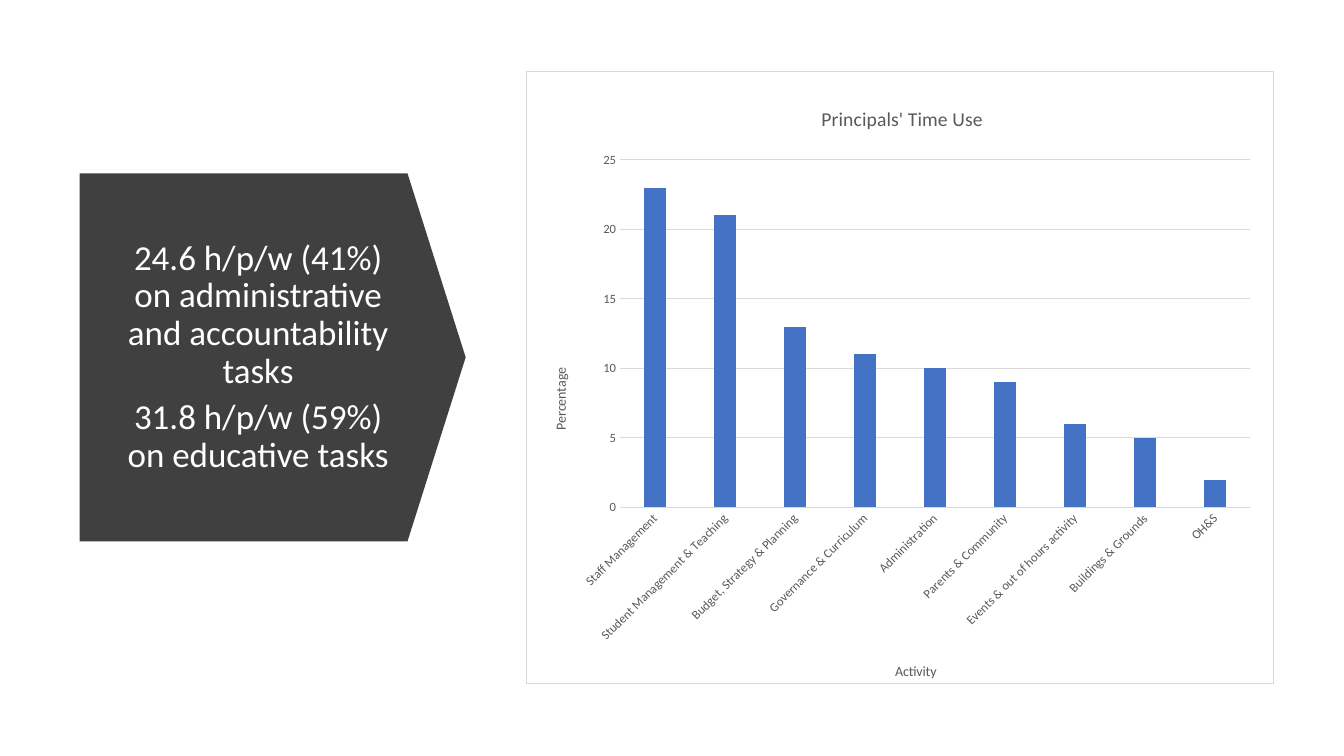
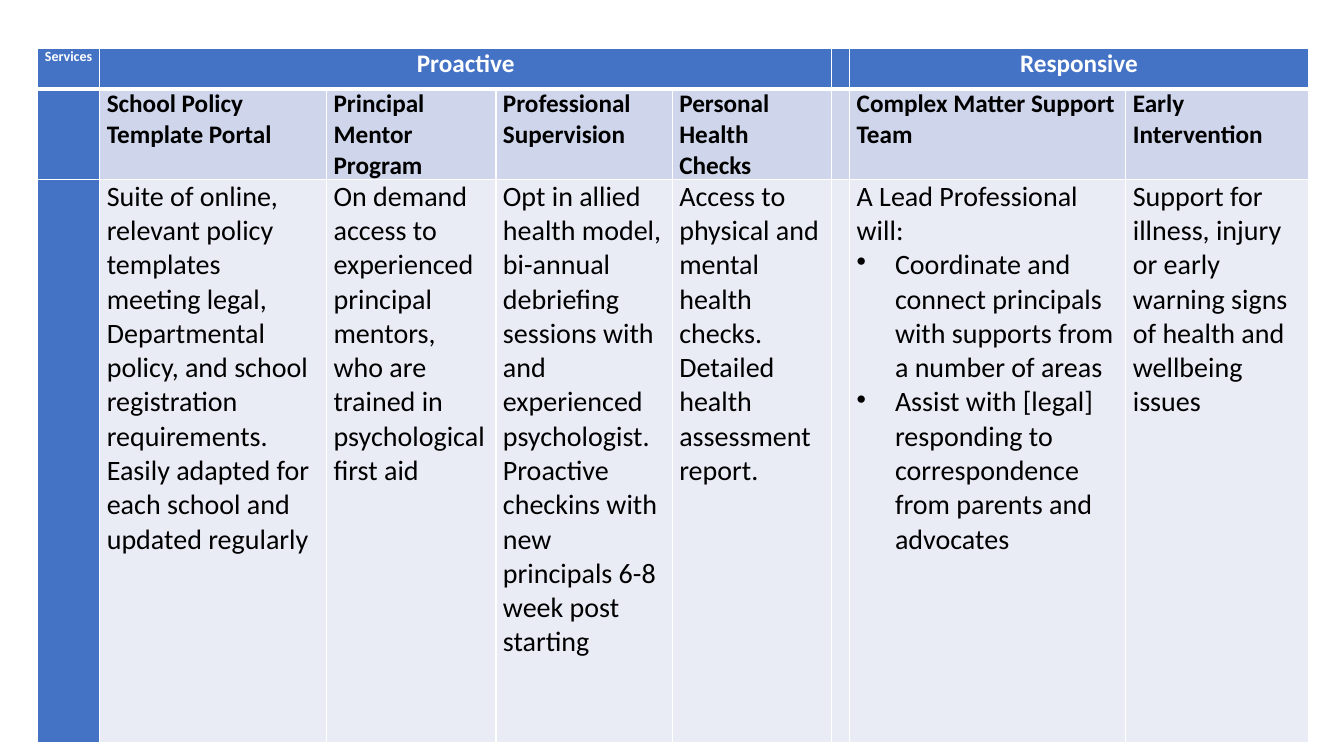
from lxml.etree import SubElement
from pptx import Presentation
from pptx.chart.data import CategoryChartData
from pptx.dml.color import RGBColor
from pptx.enum.chart import XL_CHART_TYPE, XL_TICK_MARK
from pptx.enum.shapes import MSO_SHAPE
from pptx.enum.text import MSO_ANCHOR, PP_ALIGN
from pptx.oxml import parse_xml
from pptx.oxml.ns import nsdecls, qn
from pptx.util import Inches, Pt

WHITE = RGBColor(0xFF, 0xFF, 0xFF)
BLACK = RGBColor(0x00, 0x00, 0x00)
CHARCOAL = RGBColor(0x40, 0x40, 0x40)
GREY = RGBColor(0x59, 0x59, 0x59)
RULE = RGBColor(0xD9, 0xD9, 0xD9)
BLUE = RGBColor(0x44, 0x72, 0xC4)
BAND = RGBColor(0xCF, 0xD5, 0xEA)
PALE = RGBColor(0xE9, 0xEB, 0xF5)

GRID_COLUMNS, GRID_ROWS = 160, 90
BULLET = "•"

TIME_USE = {
    "Staff Management": 23,
    "Student Management & Teaching": 21,
    "Budget, Strategy & Planning": 13,
    "Governance & Curriculum": 11,
    "Administration": 10,
    "Parents & Community": 9,
    "Events & out of hours activity": 6,
    "Buildings & Grounds": 5,
    "OH&S": 2,
}

SERVICE_COLUMNS = [7.44, 27, 20.16, 21, 18.96, 2.16, 32.88, 21.72]
SERVICE_ROWS = [4.8, 9.6, 67.08]
SERVICES = [
    ["Services", "Proactive", "", "", "", "", "Responsive", ""],
    ["", "School Policy Template Portal", "Principal Mentor Program",
     "Professional Supervision", "Personal Health Checks", "",
     "Complex Matter Support Team", "Early Intervention"],
    ["",
     "Suite of online, relevant policy templates meeting legal, Departmental policy, "
     "and school registration requirements. Easily adapted for each school and "
     "updated regularly",
     "On demand access to experienced principal mentors, who are trained in "
     "psychological first aid",
     "Opt in allied health model, bi-annual debriefing sessions with and "
     "experienced psychologist.\n"
     "Proactive checkins with new principals 6-8 week post starting",
     "Access to physical and mental health checks.\nDetailed health assessment report.",
     "",
     "A Lead Professional will:\n"
     "•Coordinate and connect principals with supports from a number of areas\n"
     "•Assist with [legal] responding to correspondence from parents and advocates",
     "Support for illness, injury or early warning signs of health and wellbeing issues"],
]
HEADER_SPANS = [(1, 4), (6, 7)]
ROW_STYLES = [
    (BLUE, {"size": Pt(18), "bold": True, "color": WHITE}, {"alignment": PP_ALIGN.CENTER}),
    (BAND, {"size": Pt(18), "bold": True, "color": BLACK}, {}),
    (PALE, {"size": Pt(20), "bold": False, "color": BLACK}, {}),
]


def apply(target, values):
    for name, value in values.items():
        if name == "color":
            target.color.rgb = value
        else:
            setattr(target, name, value)


def place(parent, index, x, y, width=None, height=None):
    for layout in parent.findall(qn("c:layout")):
        parent.remove(layout)
    layout = parse_xml(f"<c:layout {nsdecls('c')}><c:manualLayout/></c:layout>")
    values = {"xMode": "edge", "yMode": "edge", "x": x, "y": y}
    if width is not None:
        values = {"layoutTarget": "inner", **values, "w": width, "h": height}
    for name, value in values.items():
        SubElement(layout[0], qn(f"c:{name}")).set("val", str(value))
    parent.insert(index, layout)


class Deck:
    font_name = "Calibri"

    def __init__(self):
        self.presentation = Presentation()
        apply(self.presentation, {"slide_width": Inches(13.33), "slide_height": Inches(7.5)})
        self.slide = None

    def add_slide(self):
        self.slide = self.presentation.slides.add_slide(self.presentation.slide_layouts[6])

    def across(self, columns):
        return round(self.presentation.slide_width * columns / GRID_COLUMNS)

    def down(self, rows):
        return round(self.presentation.slide_height * rows / GRID_ROWS)

    def box(self, left, top, width, height):
        return self.across(left), self.down(top), self.across(width), self.down(height)

    def set_text(self, frame, text, font, layout):
        for index, line in enumerate(text.split("\n")):
            paragraph = frame.add_paragraph() if index else frame.paragraphs[0]
            if line.startswith(BULLET):
                properties = paragraph._p.get_or_add_pPr()
                properties.set("marL", str(Inches(0.38)))
                properties.set("indent", str(-Inches(0.38)))
                SubElement(properties, qn("a:buChar")).set("char", BULLET)
            apply(paragraph, layout)
            run = paragraph.add_run()
            run.text = line.removeprefix(BULLET)
            apply(run.font, {"name": self.font_name, **font})

    def pentagon(self, bounds, color, point):
        shape = self.slide.shapes.add_shape(MSO_SHAPE.PENTAGON, *self.box(*bounds))
        shape.adjustments[0] = point
        shape.shadow.inherit = False
        shape.fill.solid()
        shape.fill.fore_color.rgb = color
        shape.line.fill.background()

    def text(self, bounds, text, font, layout):
        frame = self.slide.shapes.add_textbox(*self.box(*bounds)).text_frame
        apply(frame, {"word_wrap": True, "vertical_anchor": MSO_ANCHOR.MIDDLE})
        self.set_text(frame, text, font, layout)

    def chart_title(self, title, text, size, x, y):
        self.set_text(title.text_frame, text, {"size": Pt(size), "bold": False, "color": GREY}, {})
        place(title._element, 1, x, y)

    def column_chart(self, bounds, title, category_title, value_title, values):
        data = CategoryChartData()
        data.categories = list(values)
        data.add_series("Series 1", list(values.values()))
        chart = self.slide.shapes.add_chart(
            XL_CHART_TYPE.COLUMN_CLUSTERED, *self.box(*bounds), data).chart
        chart.has_legend = False
        apply(chart.font, {"name": self.font_name, "size": Pt(10), "color": BLACK})
        self.chart_title(chart.chart_title, title, 14, 0.39, 0.05)
        plot = chart.plots[0]
        apply(plot, {"gap_width": 219, "overlap": -27, "vary_by_categories": False})
        fill = plot.series[0].format.fill
        fill.solid()
        fill.fore_color.rgb = BLUE

        category_axis, value_axis = chart.category_axis, chart.value_axis
        apply(value_axis, {"minimum_scale": 0, "maximum_scale": 25, "major_unit": 5,
                           "has_major_gridlines": True})
        for axis in (category_axis, value_axis):
            apply(axis, {"major_tick_mark": XL_TICK_MARK.NONE,
                         "minor_tick_mark": XL_TICK_MARK.NONE})
            apply(axis.tick_labels.font, {"name": self.font_name, "size": Pt(9), "color": GREY})
        for line in (category_axis.format.line, value_axis.major_gridlines.format.line):
            apply(line, {"color": RULE, "width": Pt(0.75)})
        value_axis.format.line.fill.background()
        self.chart_title(category_axis.axis_title, category_title, 10, 0.49, 0.96)
        self.chart_title(value_axis.axis_title, value_title, 10, 0.03, 0.48)
        labels = category_axis._element.find(f"{qn('c:txPr')}/{qn('a:bodyPr')}")
        labels.set("rot", "-2700000")
        next(value_axis.axis_title._element.iter(qn("a:bodyPr"))).set("rot", "-5400000")

        chart_element = chart._chartSpace.find(qn("c:chart"))
        place(chart_element.find(qn("c:plotArea")), 0, 0.125, 0.145, 0.844, 0.567)
        chart_element.addnext(parse_xml(
            f"<c:spPr {nsdecls('c', 'a')}>"
            f'<a:solidFill><a:srgbClr val="{WHITE}"/></a:solidFill>'
            f'<a:ln w="{Pt(0.75)}"><a:solidFill><a:srgbClr val="{RULE}"/></a:solidFill></a:ln>'
            "</c:spPr>"))

    def cell_borders(self, cell, widths):
        properties = cell._tc.get_or_add_tcPr()
        for index, (side, width) in enumerate(widths.items()):
            properties.insert(index, parse_xml(
                f'<a:ln{side} {nsdecls("a")} w="{Pt(width)}"><a:solidFill>'
                f'<a:srgbClr val="{WHITE}"/></a:solidFill></a:ln{side}>'))

    def service_table(self, left, top):
        bounds = self.box(left, top, sum(SERVICE_COLUMNS), sum(SERVICE_ROWS))
        table = self.slide.shapes.add_table(
            len(SERVICE_ROWS), len(SERVICE_COLUMNS), *bounds).table
        for column, width in zip(table.columns, SERVICE_COLUMNS):
            column.width = self.across(width)
        for row, height in zip(table.rows, SERVICE_ROWS):
            row.height = self.down(height)
        for first, last in HEADER_SPANS:
            table.cell(0, first).merge(table.cell(0, last))
        for row, (texts, (color, font, layout)) in enumerate(zip(SERVICES, ROW_STYLES)):
            for column, text in enumerate(texts):
                cell = table.cell(row, column)
                apply(cell, {"margin_left": Inches(0.07), "margin_right": Inches(0.07),
                             "margin_top": 0, "margin_bottom": 0})
                cell.fill.solid()
                cell.fill.fore_color.rgb = color if column else BLUE
                self.cell_borders(cell, {"L": 1, "R": 1, "T": 3 if row == 1 else 1,
                                         "B": 1 if row else 3})
                if text:
                    size = font["size"] if column else Pt(10)
                    self.set_text(cell.text_frame, text, {**font, "size": size}, layout)


def main():
    deck = Deck()

    deck.add_slide()
    deck.pentagon((9.48, 20.64, 45.96, 43.8), CHARCOAL, 0.158)
    deck.text(
        (13.44, 25.8, 34.56, 33.48),
        "24.6 h/p/w (41%) on administrative and accountability tasks\n"
        "31.8 h/p/w (59%) on educative tasks",
        {"size": Pt(25), "color": WHITE},
        {"alignment": PP_ALIGN.CENTER, "line_spacing": 0.9, "space_after": Pt(6)})
    deck.column_chart((62.64, 8.4, 89.04, 73.08), "Principals' Time Use",
                      "Activity", "Percentage", TIME_USE)

    deck.add_slide()
    deck.service_table(4.44, 5.76)

    deck.presentation.save("out.pptx")


if __name__ == "__main__":
    main()
